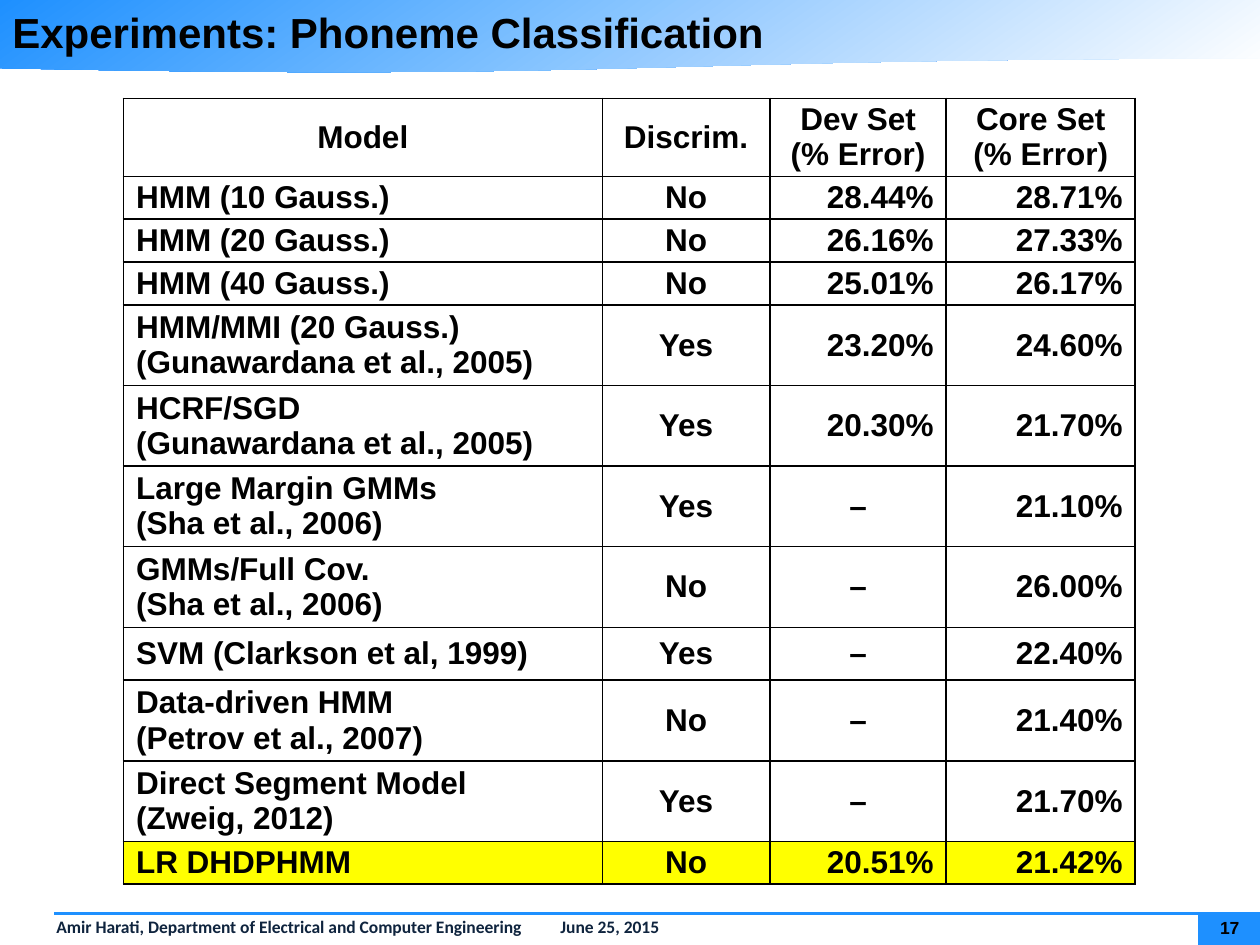
import pptx
import pptx.dml.color
import pptx.enum.shapes
import pptx.enum.text
import pptx.oxml
import pptx.oxml.ns
import pptx.util
from lxml import etree

RGB = pptx.dml.color.RGBColor
BLUE = RGB(0x1E, 0x90, 0xFF)
WHITE = RGB(0xFF, 0xFF, 0xFF)
BLACK = RGB(0, 0, 0)
NAVY = RGB(0x0F, 0x24, 0x3E)
YELLOW = RGB(0xFF, 0xFF, 0)

SHAPE = pptx.enum.shapes.MSO_SHAPE
ALIGN = pptx.enum.text.PP_ALIGN
MIDDLE = pptx.enum.text.MSO_ANCHOR.MIDDLE
qn = pptx.oxml.ns.qn

GRID_COLS, GRID_ROWS = 100, 75
UNIT = pptx.util.Inches(0.1)

COLUMN_SHARES = [3.8, 1.33, 1.4, 1.5]
HEADER_ROW, LINE_ROW, TALL_ROW, PAIR_ROW = 6.2, 3.4, 4.2, 6.4
RESULTS = [
    (HEADER_ROW, "Model", "Discrim.", "Dev Set\v(% Error)", "Core Set\v(% Error)"),
    (LINE_ROW, "HMM (10 Gauss.)", "No", "28.44%", "28.71%"),
    (LINE_ROW, "HMM (20 Gauss.)", "No", "26.16%", "27.33%"),
    (LINE_ROW, "HMM (40 Gauss.)", "No", "25.01%", "26.17%"),
    (PAIR_ROW, "HMM/MMI (20 Gauss.)\v(Gunawardana et al., 2005)", "Yes", "23.20%", "24.60%"),
    (PAIR_ROW, "HCRF/SGD\v(Gunawardana et al., 2005)", "Yes", "20.30%", "21.70%"),
    (PAIR_ROW, "Large Margin GMMs\v(Sha et al., 2006)", "Yes", "–", "21.10%"),
    (PAIR_ROW, "GMMs/Full Cov.\v(Sha et al., 2006)", "No", "–", "26.00%"),
    (TALL_ROW, "SVM (Clarkson et al, 1999)", "Yes", "–", "22.40%"),
    (PAIR_ROW, "Data-driven HMM\v(Petrov et al., 2007)", "No", "–", "21.40%"),
    (PAIR_ROW, "Direct Segment Model\n(Zweig, 2012)", "Yes", "–", "21.70%"),
    (LINE_ROW, "LR DHDPHMM", "No", "20.51%", "21.42%"),
]


def place(box, col, row, cols, rows):
    left, top = box[:2]
    return [round(v * UNIT) for v in (left + col, top + row, cols, rows)]


def style_text(tf, size, name, color, align=ALIGN.LEFT):
    for p in tf.paragraphs:
        p.alignment = align
        for r in p.runs:
            r.font.size = pptx.util.Pt(size)
            r.font.name = name
            r.font.bold = True
            r.font.color.rgb = color


def add_text(s, bounds, text, size, name, color, align=ALIGN.LEFT):
    tf = s.shapes.add_textbox(*bounds).text_frame
    tf.word_wrap = True
    tf.text = text
    style_text(tf, size, name, color, align)
    return tf


def add_panel(s, kind, bounds):
    sp = s.shapes.add_shape(kind, *bounds)
    sp.shadow.inherit = False
    sp.line.fill.background()
    return sp


def add_banner(s, box):
    sp = add_panel(s, SHAPE.FLOWCHART_DOCUMENT, place(box, 0, 0, box[2], box[3]))
    sp.fill.gradient()
    sp.fill.gradient_angle = 305
    for stop, color, position in zip(sp.fill.gradient_stops, (BLUE, WHITE), (0, 1)):
        stop.color.rgb = color
        stop.position = position


def add_title(s, box):
    add_text(s, place(box, 0, 0, box[2], box[3]),
             "Experiments: Phoneme Classification", 24, "Arial", BLACK)


def add_footer(s, box):
    sp = add_panel(s, SHAPE.RECTANGLE, place(box, 95.1, 0.1, 5, 2.6))
    sp.fill.solid()
    sp.fill.fore_color.rgb = BLUE

    tf = add_text(s, place(box, 0.4, 0, 99.7, 2.6),
                  "Amir Harati, Department of Electrical and Computer Engineering\tJune 25, 2015",
                  10, "Calibri", NAVY)
    p = tf.paragraphs[0]
    p.line_spacing = 0.95
    pPr = p._p.get_or_add_pPr()
    pPr.set("marL", str(pptx.util.Inches(0.31)))
    pPr.set("indent", "0")
    tabs = etree.SubElement(pPr, qn("a:tabLst"))
    etree.SubElement(tabs, qn("a:tab"), pos=str(pptx.util.Inches(9.31)), algn="r")

    x, y, w, h = place(box, 4.3, 0.2, 95.7, 0)
    rule = s.shapes.add_connector(pptx.enum.shapes.MSO_CONNECTOR.STRAIGHT, x, y, x + w, y + h)
    rule.line.color.rgb = BLUE
    rule.line.width = pptx.util.Pt(1.5)
    etree.SubElement(rule._element.spPr, qn("a:effectLst"))

    tf = add_text(s, place(box, 95.6, 0.5, 4, 1.7), "17", 10, "Arial", BLACK, ALIGN.CENTER)
    tf.margin_left = tf.margin_right = tf.margin_top = tf.margin_bottom = 0
    tf.vertical_anchor = MIDDLE


def add_borders(cell):
    tcPr = cell._tc.get_or_add_tcPr()
    for i, side in enumerate(("lnL", "lnR", "lnT", "lnB")):
        ln = etree.Element(qn("a:" + side), w=str(pptx.util.Pt(1)))
        fill = etree.SubElement(ln, qn("a:solidFill"))
        etree.SubElement(fill, qn("a:srgbClr"), val=str(BLACK))
        tcPr.insert(i, ln)


def fill_cell(cell, text, row, col):
    header, best = row == 0, row == len(RESULTS) - 1
    cell.text_frame.text = text
    if header or col == 1 or text == "–":
        align = ALIGN.CENTER
    else:
        align = ALIGN.LEFT if col == 0 else ALIGN.RIGHT
    style_text(cell.text_frame, 18, "Arial", BLACK, align)
    cell.vertical_anchor = MIDDLE
    cell.margin_left = pptx.util.Inches(0.04 if header or col == 1 else 0.1)
    cell.margin_right = pptx.util.Inches(0.04 if header or col < 2 else 0.1)
    cell.margin_top = cell.margin_bottom = pptx.util.Inches(0.01 if header else 0.02)
    if best:
        cell.fill.solid()
        cell.fill.fore_color.rgb = YELLOW
    else:
        cell.fill.background()
    add_borders(cell)


def add_results(s, box):
    bounds = place(box, 0, 0, box[2], box[3])
    table = s.shapes.add_table(len(RESULTS), len(COLUMN_SHARES), *bounds).table
    table.first_row = table.horz_banding = False
    for column, share in zip(table.columns, COLUMN_SHARES):
        column.width = round(bounds[2] * share / sum(COLUMN_SHARES))
    for i, (height, *texts) in enumerate(RESULTS):
        table.rows[i].height = round(height * UNIT)
        for j, text in enumerate(texts):
            fill_cell(table.cell(i, j), text, i, j)


def main():
    prs = pptx.Presentation()
    prs.slide_width = GRID_COLS * UNIT
    prs.slide_height = GRID_ROWS * UNIT
    s = prs.slides.add_slide(prs.slide_layouts[6])
    add_banner(s, (0, 0, 100.1, 5.8))
    add_footer(s, (0, 72.3, GRID_COLS, 2.7))
    add_results(s, (9.8, 7.8, 80.3, 62.4))
    add_title(s, (0, 0, GRID_COLS, 4.3))
    prs.save("out.pptx")


if __name__ == "__main__":
    main()
